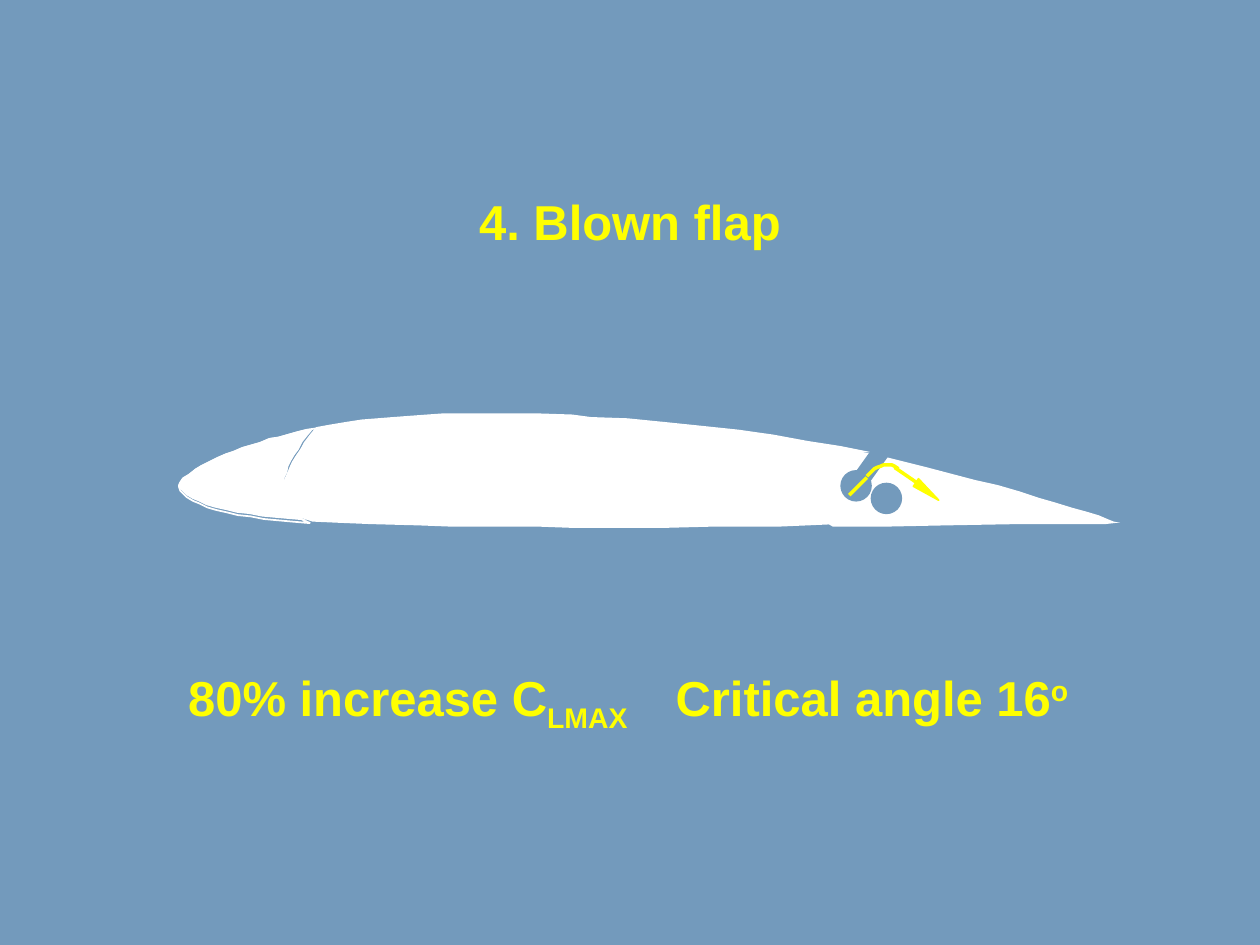
from lxml import etree
from pptx import Presentation
from pptx.dml.color import RGBColor
from pptx.enum.shapes import MSO_CONNECTOR, MSO_SHAPE
from pptx.enum.text import MSO_ANCHOR, MSO_AUTO_SIZE, PP_ALIGN
from pptx.oxml.ns import qn
from pptx.util import Pt

STRAIGHT = MSO_CONNECTOR.STRAIGHT
OVAL, RECTANGLE = MSO_SHAPE.OVAL, MSO_SHAPE.RECTANGLE
TOP, GROW = MSO_ANCHOR.TOP, MSO_AUTO_SIZE.SHAPE_TO_FIT_TEXT
CENTER, LEFT = PP_ALIGN.CENTER, PP_ALIGN.LEFT

SKY = RGBColor(0x73, 0x9A, 0xBC)
WHITE = RGBColor(0xFF, 0xFF, 0xFF)
YELLOW = RGBColor(0xFF, 0xFF, 0x00)

UNIT = Pt(0.72)  # outline points are in hundredths of an inch

FLAP = [
    (675, 357), (696, 361), (716, 366), (736, 371), (755, 376), (774, 381),
    (792, 385), (809, 390), (824, 395), (838, 399), (851, 403), (862, 406),
    (872, 409), (879, 412), (884, 414), (889, 415), (886, 415), (877, 416),
    (857, 416), (806, 416), (751, 417), (701, 418), (661, 418),
    (656, 415), (652, 413), (649, 409), (646, 405), (645, 400), (644, 396),
    (644, 391), (645, 386), (647, 381), (649, 376), (652, 372), (656, 368),
    (660, 364), (664, 361), (670, 359)]

WING_BODY = [
    (692, 359), (686, 359), (680, 361), (675, 363), (670, 365), (666, 368),
    (662, 372), (659, 376), (656, 380), (654, 384), (653, 389), (653, 398),
    (654, 403), (656, 408), (660, 412), (664, 416),
    (641, 417), (618, 418), (566, 418), (526, 419), (455, 419), (427, 418),
    (358, 418), (332, 417), (294, 416), (270, 415), (248, 414),
    (245, 413), (239, 411), (234, 409), (230, 405), (227, 401), (225, 397),
    (224, 392), (224, 389), (225, 382), (228, 375), (232, 366), (238, 357),
    (246, 345), (251, 339),
    (262, 337), (274, 335), (287, 333), (312, 331), (339, 329), (353, 328),
    (424, 328), (454, 329), (469, 331), (498, 332), (528, 335), (557, 338),
    (586, 341), (614, 345), (641, 350), (667, 354)]

NOSE = [
    (249, 340), (244, 346), (240, 351), (237, 357), (234, 361), (231, 366),
    (229, 370), (228, 375), (226, 379), (226, 392), (227, 397), (229, 401),
    (232, 405), (235, 408), (239, 411), (244, 413),
    (242, 413), (230, 412), (219, 411), (208, 410), (198, 408), (188, 407),
    (180, 405), (171, 403), (164, 401), (158, 398), (153, 396), (148, 393),
    (145, 390), (143, 388), (142, 385), (142, 384), (143, 382), (145, 379),
    (150, 376), (155, 372), (160, 369), (166, 366), (172, 363), (179, 360),
    (185, 358), (192, 355), (199, 353), (206, 351), (213, 348), (220, 347),
    (227, 345), (234, 343), (242, 341)]

ARC_CONTROLS = [(688, 378), (694, 370), (703, 367), (710, 370)]
ARROWHEAD = [(729, 380), (725, 386), (745, 397)]


def style(shape, fill=None, line=None, width=1):
    """Set fill and line; a missing colour means none."""
    shape.shadow.inherit = False
    for part, color in ((shape.fill, fill), (shape.line.fill, line)):
        if color is None:
            part.background()
        else:
            part.solid()
            part.fore_color.rgb = color
    if line is not None:
        shape.line.width = Pt(width)


def add_outline(shapes, points, fill=None, line=None, width=1, close=True):
    builder = shapes.build_freeform(*points[0], scale=UNIT)
    builder.add_line_segments(points[1:], close=close)
    outline = builder.convert_to_shape()
    style(outline, fill, line, width)
    return outline


def add_cutout(shapes, kind, left, top, width, height, rotation=0):
    cutout = shapes.add_shape(kind, Pt(left), Pt(top), Pt(width), Pt(height))
    cutout.rotation = rotation
    style(cutout, SKY)


def add_jet_line(shapes, *ends):
    connector = shapes.add_connector(STRAIGHT, *(Pt(end) for end in ends))
    connector.line.color.rgb = YELLOW
    connector.line.width = Pt(2)
    etree.SubElement(connector.element.spPr, qn("a:effectLst"))


def curve_points(controls, steps=10):
    """Sample a cubic Bezier curve."""
    points = []
    for step in range(steps + 1):
        t = step / steps
        weights = ((1 - t) ** 3, 3 * t * (1 - t) ** 2, 3 * t * t * (1 - t), t ** 3)
        points.append(tuple(
            round(sum(w * control[axis] for w, control in zip(weights, controls)), 2)
            for axis in (0, 1)))
    return points


def draw_airfoil(shapes):
    add_outline(shapes, FLAP, WHITE)
    add_outline(shapes, WING_BODY, WHITE)
    # Nose, with a slightly larger contour around it
    add_outline(shapes, NOSE, WHITE)
    contour = add_outline(shapes, NOSE, line=WHITE)
    contour.width, contour.height = Pt(78.48), Pt(54)
    # Duct openings and the slot between wing and flap
    for left, top in ((497.5, 275.8), (480.2, 268.6)):
        add_cutout(shapes, OVAL, left, top, 18, 18)
    add_cutout(shapes, RECTANGLE, 483.84, 260.64, 28.08, 10.08, 305.5)


def draw_jet(shapes):
    jet = shapes.add_group_shape().shapes
    add_jet_line(jet, 495.36, 272.88, 485.28, 282.96)
    add_outline(jet, curve_points(ARC_CONTROLS) + [(713, 372)],
                line=YELLOW, width=2, close=False)
    add_jet_line(jet, 524.88, 276.48, 511.2, 267.12)
    add_outline(jet, ARROWHEAD, YELLOW, YELLOW)


def write_line(box, left, top, width, height, runs, align=CENTER):
    """Place a one-line text box; runs are (text, baseline shift) pairs."""
    box.left, box.top, box.width, box.height = map(Pt, (left, top, width, height))
    frame = box.text_frame
    frame.word_wrap = True
    frame.auto_size = GROW
    frame.vertical_anchor = TOP
    frame.margin_left = frame.margin_right = Pt(7.2)
    frame.margin_top = frame.margin_bottom = Pt(3.6)
    para = frame.paragraphs[0]
    para.alignment = align
    for text, baseline in runs:
        span = para.add_run()
        span.text = text
        span.font.name = "Arial"
        span.font.size = Pt(28)
        span.font.bold = True
        span.font.color.rgb = YELLOW
        if baseline:
            span.font._element.set("baseline", str(baseline * 1000))
    return para


def write_figures(shapes, left, top, width, height):
    box = shapes.add_textbox(0, 0, 0, 0)
    para = write_line(
        box, left, top, width, height,
        [("80% increase C", 0), ("LMAX", -25), ("\tCritical angle 16", 0), ("o", 30)],
        LEFT)
    box.text_frame.margin_left = Pt(107.5)
    # One tab stop parts the two figures
    stops = etree.SubElement(para._p.get_or_add_pPr(), qn("a:tabLst"))
    etree.SubElement(stops, qn("a:tab"), pos=str(Pt(278.6)), algn="l")


def main():
    deck = Presentation()
    deck.slide_width, deck.slide_height = Pt(720), Pt(540)
    page = deck.slides.add_slide(deck.slide_layouts[5])
    page.background.fill.solid()
    page.background.fill.fore_color.rgb = SKY

    draw_airfoil(page.shapes)
    draw_jet(page.shapes)
    write_line(page.shapes.title, 0, 105.84, 720, 41.04, [("4. Blown flap", 0)])
    write_figures(page.shapes, 0, 378, 720, 41.04)
    deck.save("out.pptx")


if __name__ == "__main__":
    main()
